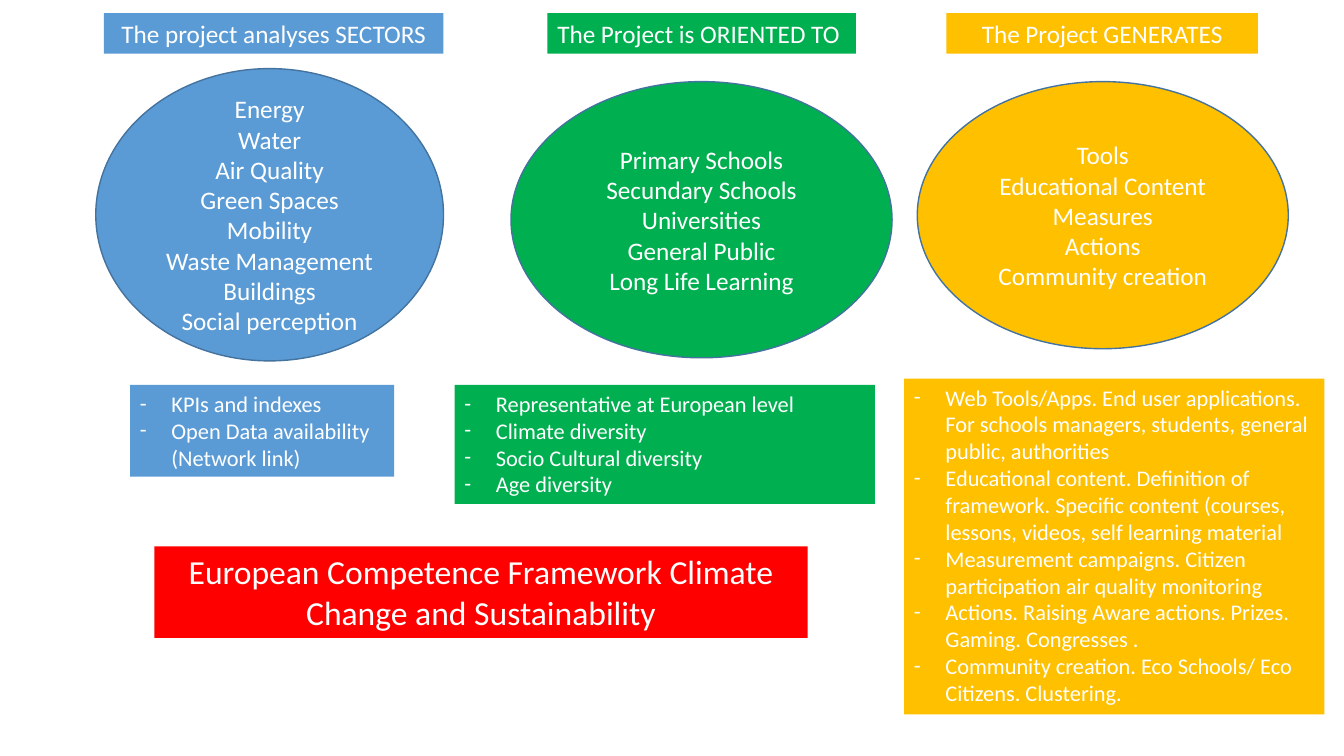
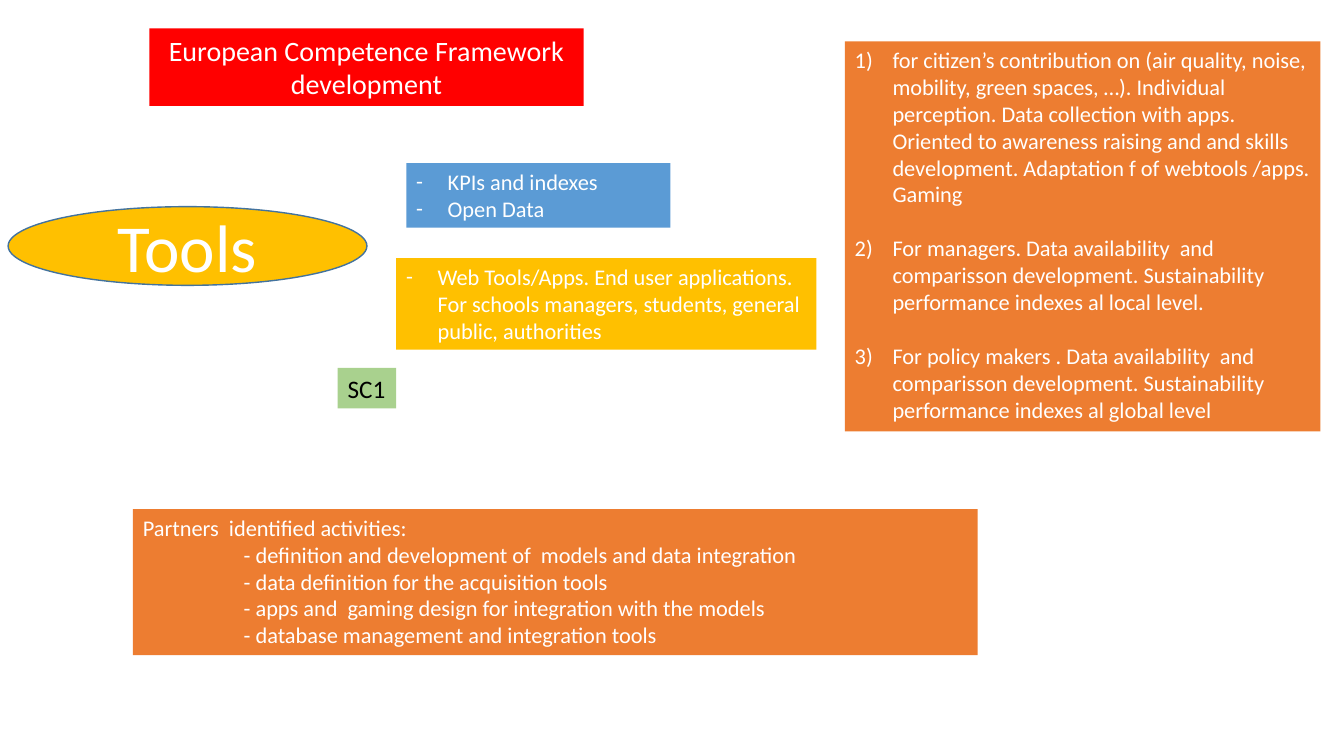
from dataclasses import dataclass

from lxml.etree import SubElement
from pptx import Presentation
from pptx.dml.color import RGBColor
from pptx.enum.shapes import MSO_SHAPE
from pptx.enum.text import MSO_ANCHOR, MSO_AUTO_SIZE, PP_ALIGN
from pptx.oxml.ns import qn
from pptx.util import Pt


@dataclass(frozen=True)
class Theme:
    font: str = "Calibri"
    blue: str = "5B9BD5"
    green: str = "00B050"
    gold: str = "FFC000"
    red: str = "FF0000"
    orange: str = "ED7D31"
    pale_green: str = "A9D18E"
    outline: str = "43739E"
    white: str = "FFFFFF"
    black: str = "000000"
    detail: int = 16
    label: int = 18
    subtitle: int = 20
    title: int = 24
    hero: int = 48


theme = Theme()
LEFT, CENTER = PP_ALIGN.LEFT, PP_ALIGN.CENTER
DASH = ("buChar", {"char": "-"}, 22.5)
NUMBER = ("buAutoNum", {"type": "arabicParenR"}, 27)


def add_panel(page, place, fill, lines, size, align=LEFT, color=theme.white,
              oval=False, wrap=True, marker=None, gap=0):
    """Add a filled box or outlined oval holding one paragraph per line."""
    bounds = [Pt(value) for value in place]
    if oval:
        box = page.shapes.add_shape(MSO_SHAPE.OVAL, *bounds)
        box.shadow.inherit = False
        box.line.color.rgb = RGBColor.from_string(theme.outline)
        box.line.width = Pt(1)
    else:
        box = page.shapes.add_textbox(*bounds)
    box.fill.solid()
    box.fill.fore_color.rgb = RGBColor.from_string(fill)
    frame = box.text_frame
    frame.word_wrap = wrap
    frame.vertical_anchor = MSO_ANCHOR.MIDDLE if oval else MSO_ANCHOR.TOP
    frame.auto_size = MSO_AUTO_SIZE.NONE if oval else MSO_AUTO_SIZE.SHAPE_TO_FIT_TEXT
    frame.text = "\n".join(lines)
    for index, para in enumerate(frame.paragraphs):
        para.alignment = align
        if marker:
            add_marker(para, *marker)
        if gap and index:
            para.space_before = Pt(gap)
        para.font.name = theme.font
        para.font.size = Pt(size)
        para.font.color.rgb = RGBColor.from_string(color)
    return frame


def add_marker(para, tag, attributes, indent):
    """Give a paragraph a hanging bullet or number."""
    properties = para._p.get_or_add_pPr()
    properties.set("marL", str(Pt(indent)))
    properties.set("indent", str(-Pt(indent)))
    SubElement(properties, qn("a:buFont"), {"typeface": theme.font})
    SubElement(properties, qn(f"a:{tag}"), attributes)


deck = Presentation()
deck.slide_width, deck.slide_height = Pt(960), Pt(540)
blank = deck.slide_layouts[6]

web_tools = ("Web Tools/Apps. End user applications. For schools managers, "
             "students, general public, authorities")

# Overview: sectors, audience and results
overview = deck.slides.add_slide(blank)
columns = [
    (theme.blue, "The project analyses SECTORS", CENTER,
     (74.2, 9.4, 242.6, 29), (68.4, 49, 248.4, 208.8), (92.9, 275, 188.6, 65.5),
     ["Energy", "Water", "Air Quality", "Green Spaces", "Mobility",
      "Waste Management", "Buildings", "Social perception"],
     ["KPIs and indexes", "Open Data availability (Network link)"]),
    (theme.green, "The Project is ORIENTED TO", LEFT,
     (391, 9.4, 220.3, 29), (365, 58.3, 272.2, 197.3), (324.7, 275, 300.2, 85),
     ["Primary Schools", "Secundary Schools", "Universities",
      "General Public", "Long Life Learning"],
     ["Representative at European level", "Climate diversity",
      "Socio Cultural diversity", "Age diversity"]),
    (theme.gold, "The Project GENERATES", CENTER,
     (676, 9.4, 222.5, 29), (655.2, 58.3, 265, 190.8), (645.8, 270.5, 300.2, 239.8),
     ["Tools", "Educational Content", "Measures", "Actions", "Community creation"],
     [web_tools,
      "Educational content. Definition of framework. Specific content "
      "(courses, lessons, videos, self learning material",
      "Measurement campaigns. Citizen participation air quality monitoring",
      "Actions. Raising Aware actions. Prizes. Gaming. Congresses .",
      "Community creation. Eco Schools/ Eco Citizens. Clustering."]),
]
for fill, heading, align, heading_place, oval_place, detail_place, topics, details in columns:
    add_panel(overview, oval_place, fill, topics, theme.label, CENTER, oval=True)
    add_panel(overview, heading_place, fill, [heading], theme.label, align)
    add_panel(overview, detail_place, fill, details, theme.detail, marker=DASH)
add_panel(overview, (110.2, 390.2, 466.6, 65.5), theme.red,
          ["European Competence Framework Climate Change and Sustainability"],
          theme.title, CENTER)

# Tools and partner activities
tools = deck.slides.add_slide(blank)
add_panel(tools, (5.8, 147.6, 256.3, 56.2), theme.gold, ["Tools"],
          theme.hero, CENTER, oval=True)
add_panel(tools, (106.6, 20.2, 310.3, 55.4), theme.red,
          ["European Competence Framework development"], theme.subtitle, CENTER)
add_panel(tools, (290.2, 116.6, 188.6, 46), theme.blue,
          ["KPIs and indexes", "Open Data"], theme.detail, marker=DASH)
add_panel(tools, (283, 184.3, 300.2, 65.5), theme.gold, [web_tools],
          theme.detail, marker=DASH)
add_panel(tools, (241.2, 262.8, 41.8, 29), theme.pale_green, ["SC1"],
          theme.label, color=theme.black, wrap=False)
add_panel(tools, (603.4, 29.5, 339.8, 278.6), theme.orange, [
    "for citizen’s contribution on (air quality, noise, mobility, green spaces, …). "
    "Individual perception. Data collection with apps. Oriented to awareness raising "
    "and and skills development. Adaptation f of webtools /apps. Gaming",
    "For managers. Data availability  and comparisson development. "
    "Sustainability performance indexes al local level.",
    "For policy makers . Data availability  and comparisson development. "
    "Sustainability performance indexes al global level",
], theme.detail, marker=NUMBER, gap=19.3)
activities = add_panel(tools, (95, 363.6, 603.4, 104.4), theme.orange, [
    "Partners  identified activities:",
    "- definition and development of  models and data integration",
    "- data definition for the acquisition tools",
    "- apps and  gaming design for integration with the models",
    "- database management and integration tools",
], theme.detail)
for para in activities.paragraphs[1:]:
    para._p.get_or_add_pPr().set("marL", str(Pt(72)))

deck.save("out.pptx")
